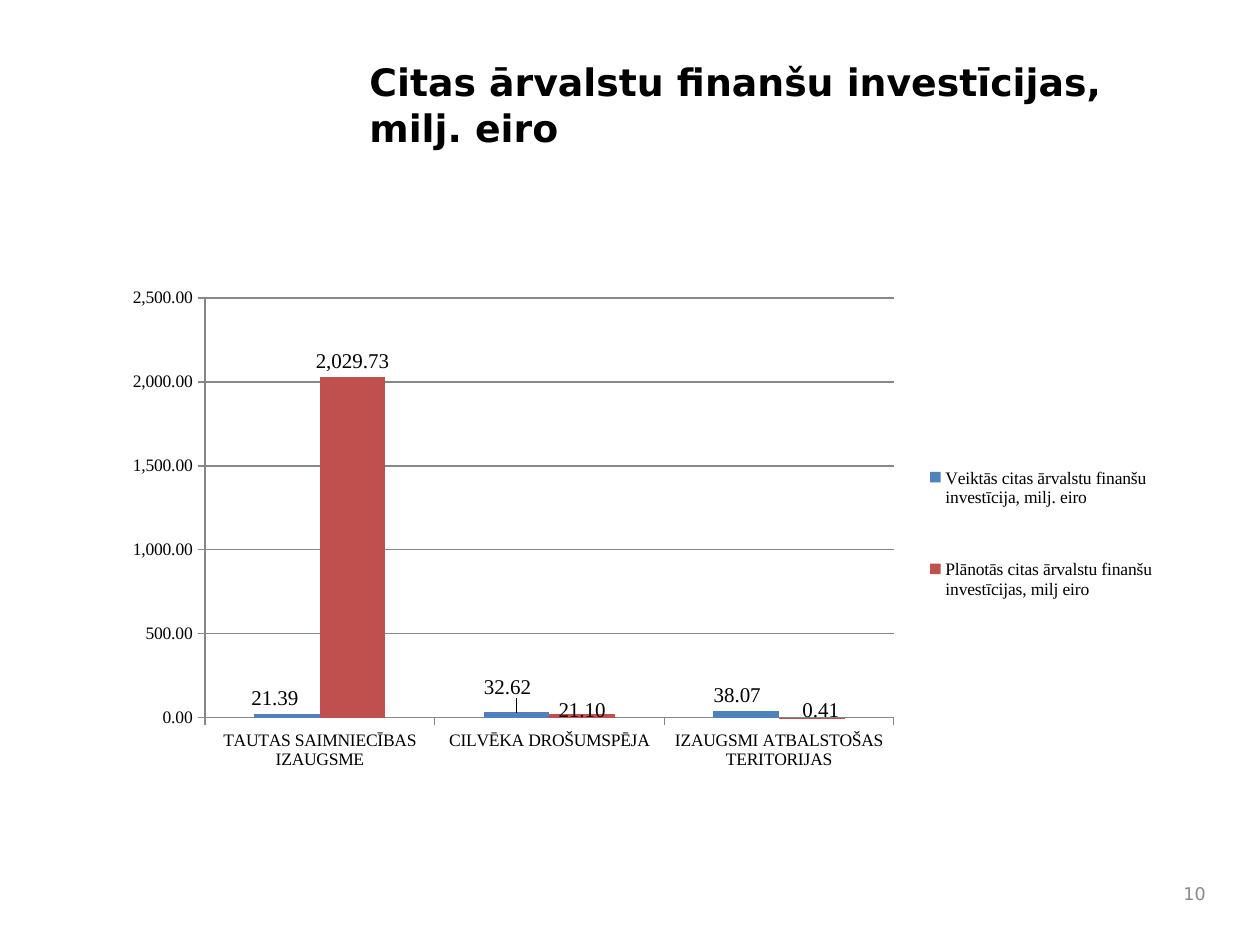
from pptx import Presentation
from pptx import util as u
from pptx.chart import data as cd
from pptx.dml.color import RGBColor
from pptx.enum import chart as ec, text
from pptx.oxml import parse_xml
from pptx.oxml.ns import nsdecls

SCALE = 914400 / 126
WIDE, HIGH = 1095, 644
COLORS = {"ink": "000000", "page": "898989", "line": "868686",
          "done": "4F81BD", "plan": "C0504D"}
FORM = "#,##0.00,,"
CATS = ["TAUTAS SAIMNIECĪBAS IZAUGSME", "CILVĒKA DROŠUMSPĒJA",
        "IZAUGSMI ATBALSTOŠAS TERITORIJAS"]
SERIES = [
    ("Veiktās citas ārvalstu finanšu investīcija, milj. eiro",
     (21390000, 32620000, 38070000), "done",
     {0: (-12, 0), 1: (-9, -9), 2: (-9, 0)}),
    ("Plānotās citas ārvalstu finanšu investīcijas, milj eiro",
     (2029730000, 21100000, 410000), "plan",
     {1: (0, 12), 2: (9, 9)}),
]


def px(n):
    return u.Emu(round(n * SCALE))


def rgb(name):
    return RGBColor.from_string(COLORS[name])


def style(font, size, color="ink", face="Times New Roman", bold=False):
    font.size = u.Pt(size)
    font.name = face
    font.bold = bold
    font.color.rgb = rgb(color)


def label(slide, box, words, size, color, align, anchor, bold=False):
    frame = slide.shapes.add_textbox(*map(px, box)).text_frame
    frame.word_wrap = True
    frame.vertical_anchor = anchor
    frame.text = words
    para = frame.paragraphs[0]
    para.alignment = align
    style(para.runs[0].font, size, color, "DejaVu Sans", bold)


def layout(x, y, w=None, h=None, inner=False, edge=True):
    tags = '<c:layoutTarget val="inner"/>' if inner else ""
    if edge:
        tags += '<c:xMode val="edge"/><c:yMode val="edge"/>'
    sizes = {"x": x / WIDE, "y": y / HIGH}
    if w:
        sizes.update(w=w / WIDE, h=h / HIGH)
    tags += "".join(f'<c:{k} val="{v:.4f}"/>' for k, v in sizes.items())
    return parse_xml(f'<c:layout {nsdecls("c")}><c:manualLayout>{tags}'
                     '</c:manualLayout></c:layout>')


def place(holder, item, after=None):
    for old in holder.findall(item.tag):
        holder.remove(old)
    if after is None:
        holder.insert(0, item)
    else:
        after.addnext(item)


def shift(point, move):
    tag = point.data_label
    style(tag.font, 12)
    tag.position = ec.XL_LABEL_POSITION.OUTSIDE_END
    node = point.data_label._get_or_add_dLbl()
    spot = layout(*move, edge=False)
    place(node, spot, node[0])
    spot.addnext(parse_xml(f'<c:numFmt {nsdecls("c")} formatCode="{FORM}" '
                           'sourceLinked="0"/>'))


def paint(series, color, moves):
    series.format.fill.solid()
    series.format.fill.fore_color.rgb = rgb(color)
    tags = series.data_labels
    tags.show_value = True
    tags.number_format = FORM
    tags.number_format_is_linked = False
    tags.position = ec.XL_LABEL_POSITION.OUTSIDE_END
    style(tags.font, 12)
    for i, move in moves.items():
        shift(series.points[i], move)


def axes(chart):
    for axis in (chart.category_axis, chart.value_axis):
        axis.major_tick_mark = ec.XL_TICK_MARK.OUTSIDE
        axis.minor_tick_mark = ec.XL_TICK_MARK.NONE
        axis.format.line.color.rgb = rgb("line")
        style(axis.tick_labels.font, 10)
    axis = chart.value_axis
    axis.minimum_scale, axis.maximum_scale = 0, 2500000000
    axis.major_unit = 500000000
    axis.major_gridlines.format.line.color.rgb = rgb("line")
    axis.tick_labels.number_format = FORM
    axis.tick_labels.number_format_is_linked = False


def columns(slide):
    data = cd.CategoryChartData(number_format=FORM)
    data.categories = CATS
    for name, vals, _, _ in SERIES:
        data.add_series(name, vals)
    chart = slide.shapes.add_chart(
        ec.XL_CHART_TYPE.COLUMN_CLUSTERED,
        *map(px, (81, 195, WIDE, HIGH)), data).chart
    style(chart.font, 10)
    chart.has_title = False
    plot = chart.plots[0]
    plot.gap_width, plot.overlap = 150, 0
    plot.vary_by_categories = False
    axes(chart)
    for series, (_, _, color, moves) in zip(plot.series, SERIES):
        paint(series, color, moves)
    chart.has_legend = True
    legend = chart.legend
    legend.position = ec.XL_LEGEND_POSITION.RIGHT
    legend.include_in_layout = False
    style(legend.font, 10)
    place(legend._element, layout(840, 221, 240, 236), legend._element[0])
    area = chart._chartSpace.chart.plotArea
    place(area, layout(124, 103, 689, 420, inner=True))


def main():
    deck = Presentation()
    deck.slide_width, deck.slide_height = px(1260), px(945)
    slide = deck.slides.add_slide(deck.slide_layouts[6])
    label(slide, (357, 53, 840, 142),
          "Citas ārvalstu finanšu investīcijas, milj. eiro", 21.6, "ink",
          text.PP_ALIGN.LEFT, text.MSO_ANCHOR.TOP, True)
    columns(slide)
    label(slide, (1157, 872, 61, 42), "10", 10, "page",
          text.PP_ALIGN.RIGHT, text.MSO_ANCHOR.MIDDLE)
    deck.save("out.pptx")


if __name__ == "__main__":
    main()
